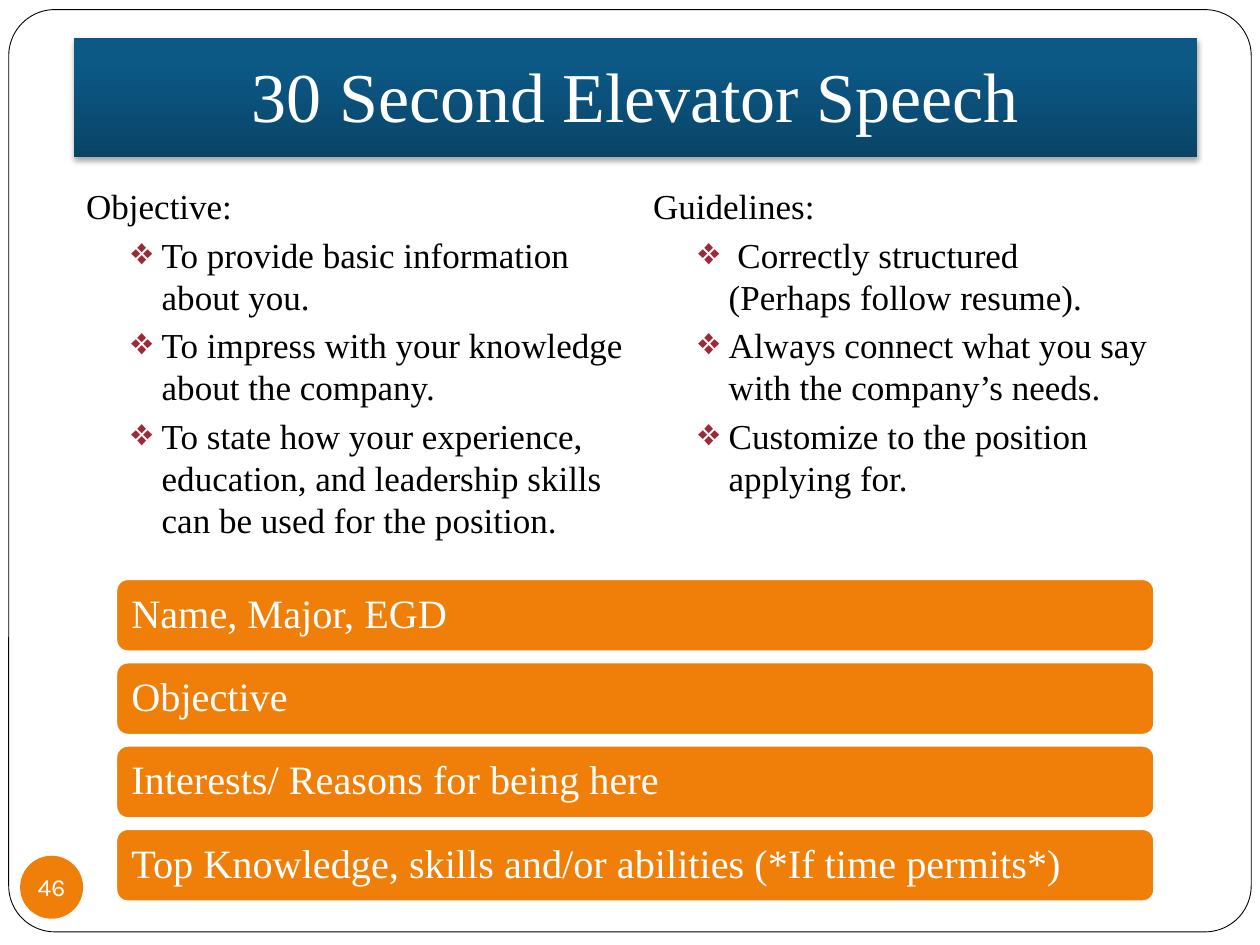
from lxml import etree
from pptx import Presentation
from pptx import util as u
from pptx.dml.color import RGBColor
from pptx.enum import shapes, text
from pptx.oxml import parse_xml
from pptx.oxml.ns import nsdecls, qn

WHITE = RGBColor(0xFF, 0xFF, 0xFF)
BLACK = RGBColor(0, 0, 0)
ORANGE = RGBColor(0xF0, 0x7F, 0x09)
RED = RGBColor(0x9F, 0x29, 0x36)
DEEP = RGBColor(0x09, 0x44, 0x67)
BLUE = RGBColor(0x0C, 0x59, 0x86)
PALE = RGBColor(0x0A, 0x5A, 0x89)
SERIF = "Times New Roman"


def write(para, words, size=20, color=BLACK, font=SERIF, align=text.PP_ALIGN.LEFT,
          before=0, line=None):
    """Fill a paragraph and set its format."""
    para.text = words
    para.alignment = align
    para.space_before = u.Pt(before)
    para.line_spacing = line
    for run in para.runs:
        run.font.size = u.Pt(size)
        run.font.name = font
        run.font.color.rgb = color


def indent(para, left=0, hang=0, mark=None):
    """Set the margins of a paragraph and its bullet."""
    props = para._p.get_or_add_pPr()
    props.set("marL", str(u.Pt(left)))
    props.set("indent", str(u.Pt(-hang)))
    if not mark:
        etree.SubElement(props, qn("a:buNone"))
        return
    tint = etree.SubElement(props, qn("a:buClr"))
    etree.SubElement(tint, qn("a:srgbClr"), val=str(RED))
    etree.SubElement(props, qn("a:buSzPct"), val="85000")
    etree.SubElement(props, qn("a:buFont"), typeface=SERIF)
    etree.SubElement(props, qn("a:buChar"), char=mark)


class Deck:
    def __init__(self):
        self.file = Presentation()
        self.file.slide_width, self.file.slide_height = u.Pt(720), u.Pt(540)
        self.slide = self.file.slides.add_slide(self.file.slide_layouts[3])

    def place(self, shape, left, top, width, height):
        shape.left, shape.top = u.Pt(left), u.Pt(top)
        shape.width, shape.height = u.Pt(width), u.Pt(height)

    def pad(self, frame, left, top, right, bottom, anchor):
        frame.margin_left, frame.margin_top = u.Pt(left), u.Pt(top)
        frame.margin_right, frame.margin_bottom = u.Pt(right), u.Pt(bottom)
        frame.vertical_anchor = anchor
        frame.auto_size = text.MSO_AUTO_SIZE.NONE
        frame.word_wrap = True

    def shape(self, kind, box, fill, line=None, weight=0):
        item = self.slide.shapes.add_shape(kind, *map(u.Pt, box))
        item.shadow.inherit = False
        item.fill.solid()
        item.fill.fore_color.rgb = fill
        if line is None:
            item.line.fill.background()
        else:
            item.line.color.rgb = line
            item.line.width = u.Pt(weight)
        return item

    def border(self, box):
        item = self.shape(shapes.MSO_SHAPE.ROUNDED_RECTANGLE, box, WHITE, BLACK, 0.5)
        item.adjustments[0] = 0.05
        # Send it behind the placeholders
        self.slide.shapes._spTree.insert(2, item._element)

    def title(self, words, box):
        item = self.slide.shapes.title
        self.place(item, *box)
        self.pad(item.text_frame, 7.2, 3.6, 7.2, 7.2, text.MSO_ANCHOR.MIDDLE)
        write(item.text_frame.paragraphs[0], words, size=40, color=WHITE,
              align=text.PP_ALIGN.CENTER)
        # Three-stop gradient and soft shadow
        stops = "".join(
            f'<a:gs pos="{pos}000"><a:srgbClr val="{color}"/></a:gs>'
            for pos, color in ((0, DEEP), (80, BLUE), (100, PALE)))
        props = item._element.spPr
        props.append(parse_xml(
            f'<a:gradFill {nsdecls("a")}><a:gsLst>{stops}</a:gsLst>'
            '<a:lin ang="16200000" scaled="0"/></a:gradFill>'))
        props.append(parse_xml(
            f'<a:effectLst {nsdecls("a")}><a:outerShdw blurRad="{u.Pt(3.1)}" '
            f'dist="{u.Pt(1.8)}" dir="5400000" rotWithShape="0"><a:srgbClr val="{BLACK}">'
            '<a:alpha val="35000"/></a:srgbClr></a:outerShdw></a:effectLst>'))

    def list(self, slot, box, head, items):
        item = self.slide.placeholders[slot]
        self.place(item, *box)
        frame = item.text_frame
        self.pad(frame, 7.2, 3.6, 7.2, 3.6, text.MSO_ANCHOR.TOP)
        write(frame.paragraphs[0], head, before=5.8)
        indent(frame.paragraphs[0])
        for words in items:
            para = frame.add_paragraph()
            para.level = 1
            write(para, words, before=3.7)
            indent(para, left=43.2, hang=18, mark="❖")

    def bar(self, words, box):
        item = self.shape(shapes.MSO_SHAPE.ROUNDED_RECTANGLE, box, ORANGE, WHITE, 2)
        self.pad(item.text_frame, 7, 7.2, 7, 7.2, text.MSO_ANCHOR.MIDDLE)
        write(item.text_frame.paragraphs[0], words, size=23, color=WHITE, line=0.9)

    def badge(self, words, box):
        item = self.shape(shapes.MSO_SHAPE.OVAL, box, ORANGE)
        self.pad(item.text_frame, 0, 0, 0, 0, text.MSO_ANCHOR.MIDDLE)
        item.text_frame.word_wrap = False
        write(item.text_frame.paragraphs[0], words, size=14, color=WHITE, font="Karla",
              align=text.PP_ALIGN.CENTER)


def main():
    deck = Deck()
    # Frame and heading
    deck.border((5, 5.5, 710, 527))
    deck.title("30 Second Elevator Speech", (42, 21.6, 642, 68.4))

    # Two lists
    deck.list(1, (42, 102, 324, 222), "Objective:", (
        "To provide basic information about you.",
        "To impress with your knowledge about the company.",
        "To state how your experience, education, and leadership skills "
        "can be used for the position."))
    deck.list(2, (366, 102, 306, 222), "Guidelines:", (
        " Correctly structured\v(Perhaps follow resume).",
        "Always connect what you say with the company’s needs.",
        "Customize to the position applying for."))

    # Steps of the speech
    steps = ("Name, Major, EGD", "Objective", "Interests/ Reasons for being here",
             "Top Knowledge, skills and/or abilities (*If time permits*)")
    for row, step in enumerate(steps):
        deck.bar(step, (66, 330.5 + 47.6 * row, 594, 42.2))

    # Page number
    deck.badge("46", (11.5, 489, 36, 36))
    deck.file.save("out.pptx")


if __name__ == "__main__":
    main()
